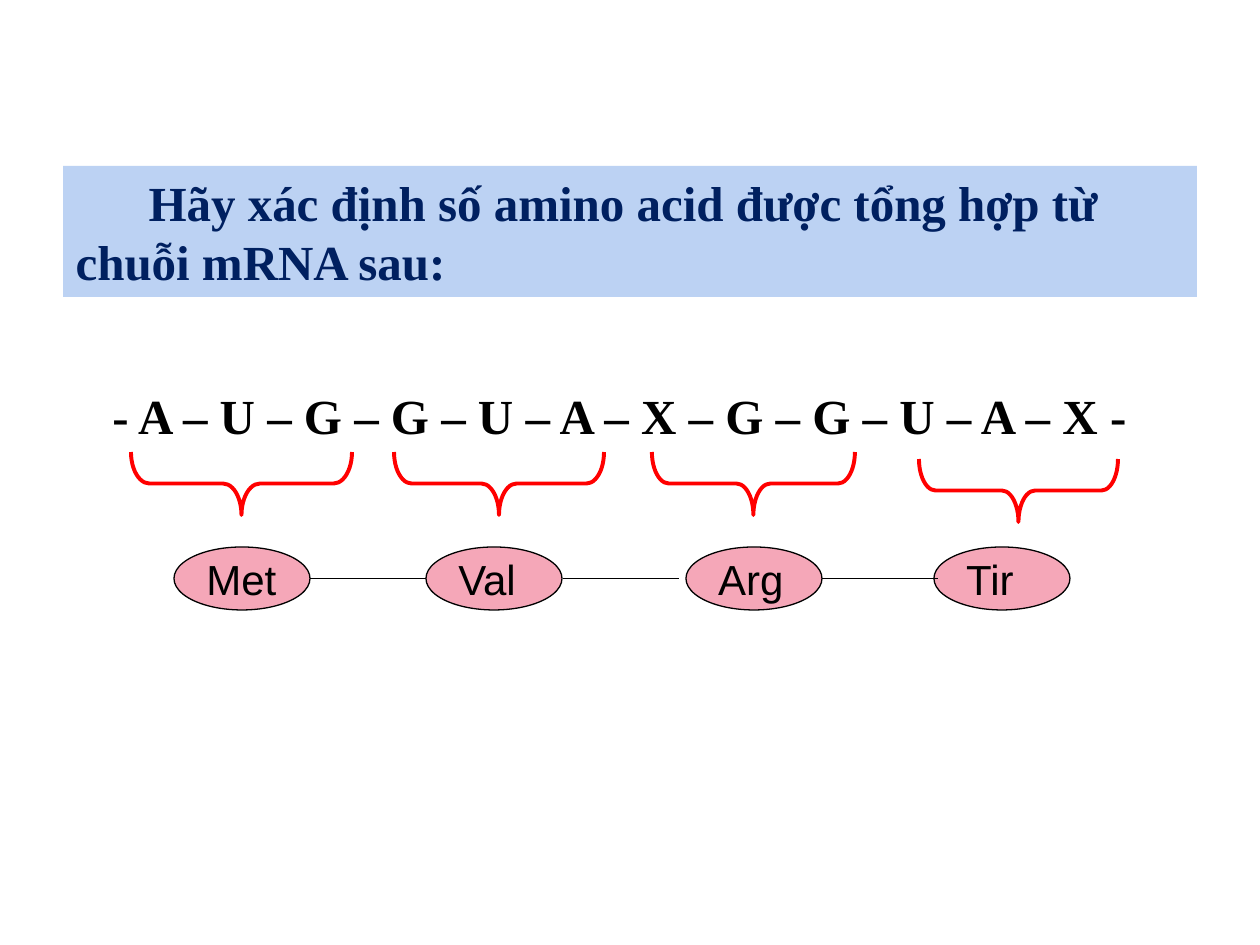
"""Build a slide that translates an mRNA chain into four amino acids."""
from dataclasses import dataclass

from lxml import etree
from pptx import Presentation
from pptx import util as u
from pptx.dml.color import RGBColor
from pptx.enum import shapes, text
from pptx.oxml.ns import qn

PIXELS_PER_INCH = 126
COLOURS = {"banner": "BCD2F3", "navy": "002060", "black": "000000",
           "red": "FF0000", "pink": "F5A7B8"}
BRACE_HEIGHT = 63
ACID_TOP, ACID_WIDTH, ACID_HEIGHT = 547, 136, 63
BOND_LENGTH = 116


@dataclass(frozen=True)
class Codon:
    brace_left: int
    brace_top: int
    brace_width: int
    acid: str
    acid_left: int


CODONS = [
    Codon(131, 452, 221, "Met", 174),
    Codon(394, 452, 210, "Val", 426),
    Codon(652, 452, 203, "Arg", 686),
    Codon(919, 459, 199, "Tir", 934),
]
BOND_LEFTS = [310, 563, 822]


def px(length: float) -> u.Emu:
    return u.Emu(round(length * u.Inches(1) / PIXELS_PER_INCH))


def colour(name: str) -> RGBColor:
    return RGBColor.from_string(COLOURS[name])


def place(shape, left: int, top: int, width: int, height: int) -> None:
    shape.left, shape.top = px(left), px(top)
    shape.width, shape.height = px(width), px(height)


def write(shape, content: str, *, size: int, font: str, ink: str,
          bold: bool = False, wrap: bool = True, indent: int = 0,
          anchor=text.MSO_ANCHOR.TOP, fit=text.MSO_AUTO_SIZE.NONE) -> None:
    frame = shape.text_frame
    frame.auto_size = fit
    frame.word_wrap = wrap
    frame.vertical_anchor = anchor
    paragraph = frame.paragraphs[0]
    paragraph.alignment = text.PP_ALIGN.LEFT
    if indent:
        paragraph._p.get_or_add_pPr().set("indent", str(px(indent)))
    run = paragraph.add_run()
    run.text = content
    run.font.size, run.font.name, run.font.bold = u.Pt(size), font, bold
    run.font.color.rgb = colour(ink)


def add_brace(group, codon: Codon) -> None:
    left = codon.brace_left + (codon.brace_width - BRACE_HEIGHT) / 2
    top = codon.brace_top + (BRACE_HEIGHT - codon.brace_width) / 2
    brace = group.shapes.add_shape(
        shapes.MSO_SHAPE.LEFT_BRACE, px(left), px(top),
        px(BRACE_HEIGHT), px(codon.brace_width))
    brace.rotation = 270
    brace.adjustments[0] = round(codon.brace_width / BRACE_HEIGHT / 12, 3)
    brace.shadow.inherit = False
    brace.fill.background()
    brace.line.color.rgb = colour("red")
    brace.line.width = u.Pt(2.25)


def add_acid(group, codon: Codon) -> None:
    acid = group.shapes.add_shape(
        shapes.MSO_SHAPE.OVAL, px(codon.acid_left), px(ACID_TOP),
        px(ACID_WIDTH), px(ACID_HEIGHT))
    acid.shadow.inherit = False
    acid.fill.solid()
    acid.fill.fore_color.rgb = colour("pink")
    acid.line.color.rgb = colour("black")
    acid.line.width = u.Pt(0.75)
    write(acid, codon.acid, size=24, font="Arial", ink="black", wrap=False,
          anchor=text.MSO_ANCHOR.MIDDLE)


def add_bond(group, left: int) -> None:
    middle = px(ACID_TOP + ACID_HEIGHT / 2)
    bond = group.shapes.add_connector(
        shapes.MSO_CONNECTOR.STRAIGHT, px(left), middle,
        px(left + BOND_LENGTH), middle)
    bond.line.color.rgb = colour("black")
    bond.line.width = u.Pt(0.75)
    etree.SubElement(bond._element.spPr, qn("a:effectLst"))


def main() -> None:
    presentation = Presentation()
    presentation.slide_width, presentation.slide_height = px(1260), px(945)
    slide = presentation.slides.add_slide(presentation.slide_layouts[5])

    title = slide.shapes.title
    place(title, 63, 166, 1134, 131)
    title.fill.solid()
    title.fill.fore_color.rgb = colour("banner")
    heading = {"size": 28, "font": "Times New Roman", "bold": True,
               "fit": text.MSO_AUTO_SIZE.SHAPE_TO_FIT_TEXT}
    write(title, "Hãy xác định số amino acid được tổng hợp từ chuỗi mRNA sau:",
          ink="navy", indent=73, **heading)

    sequence = slide.shapes.add_textbox(px(100), px(379), px(1061), px(72))
    write(sequence, "- A – U – G – G – U – A – X – G – G – U – A – X -",
          ink="black", **heading)

    braces = slide.shapes.add_group_shape()
    chain = slide.shapes.add_group_shape()
    for codon in CODONS:
        add_brace(braces, codon)
        add_acid(chain, codon)
    for left in BOND_LEFTS:
        add_bond(chain, left)

    presentation.save("out.pptx")


if __name__ == "__main__":
    main()
